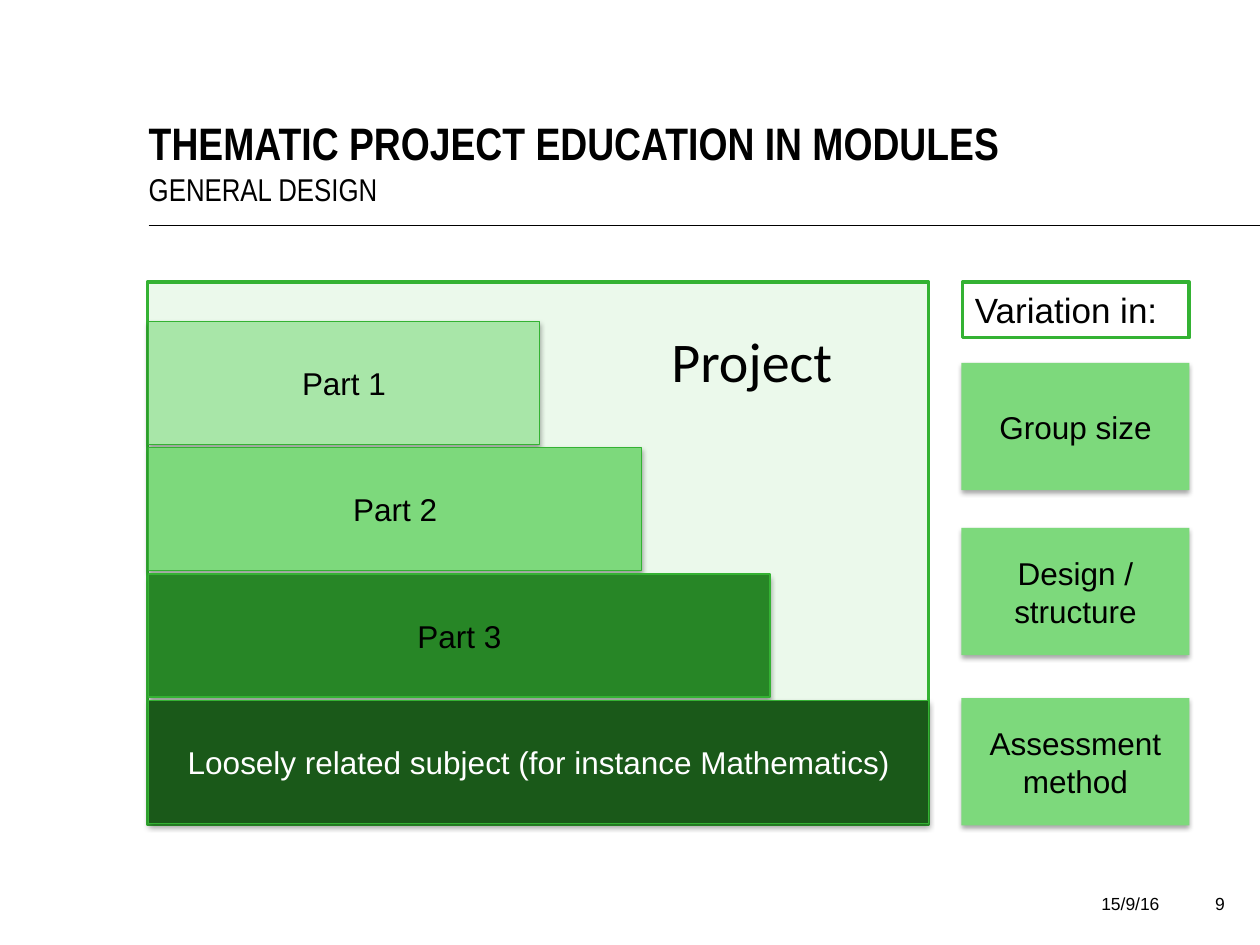
from lxml import etree
from pptx import Presentation
from pptx.dml.color import RGBColor
from pptx.enum.shapes import MSO_CONNECTOR, MSO_SHAPE
from pptx.enum.text import MSO_ANCHOR, MSO_AUTO_SIZE, PP_ALIGN
from pptx.oxml import parse_xml
from pptx.oxml.ns import qn
from pptx.util import Pt

RECT, STRAIGHT = MSO_SHAPE.RECTANGLE, MSO_CONNECTOR.STRAIGHT
TOP, MIDDLE, BOTTOM = MSO_ANCHOR.TOP, MSO_ANCHOR.MIDDLE, MSO_ANCHOR.BOTTOM
LEFT, CENTER, RIGHT = PP_ALIGN.LEFT, PP_ALIGN.CENTER, PP_ALIGN.RIGHT
GROW = MSO_AUTO_SIZE.SHAPE_TO_FIT_TEXT

# Content
TITLE = "THEMATIC PROJECT EDUCATION IN MODULES"
SUBTITLE = "GENERAL DESIGN"
DATE, PAGE = "15/9/16", "9"
PROJECT, VARIATION = "Project", "Variation in:"
PARTS = [  # label, width, fill, text colour
    ("Part 1", 223.2, "pale", "black"),
    ("Part 2", 281.5, "light", "black"),
    ("Part 3", 355, "mid", "black"),
    ("Loosely related subject (for instance Mathematics)", 445.7, "dark", "white"),
]
VARIATIONS = [("Group size", 207.4), ("Design / structure", 301.7),
              ("Assessment method", 398.9)]  # label, top

THEME = {
    "black": "000000", "white": "FFFFFF", "outline": "34B233",
    "tint": "EBF9EB", "pale": "A8E6A8", "light": "7DD97C",
    "mid": "278626", "dark": "1A5919",
    "heading": "Arial Narrow", "body": "Arial", "label": "Calibri",
    "title": 26, "subtitle": 18, "box": 18, "variation": 20,
    "project": 32, "footer": 10,
}

# Layout
MARGIN = 85
PANEL = (84.2, 161.3, 446.4, 309.6)
PART_TOP, PART_STEP, PART_HEIGHT = 183.6, 72.25, 70.3
CARD_LEFT, CARD_WIDTH, CARD_HEIGHT = 549.4, 130.3, 72.7
NO_INSETS = (0, 0, 0, 0)
DEFAULT_INSETS = (7.2, 3.6, 7.2, 3.6)

SHADOW = """<a:outerShdw
 xmlns:a="http://schemas.openxmlformats.org/drawingml/2006/main"
 blurRad="39370" dist="22860" dir="5400000" rotWithShape="0">
 <a:srgbClr val="000000"><a:alpha val="35000"/></a:srgbClr></a:outerShdw>"""


def colour(name):
    return RGBColor.from_string(THEME[name])


def write(shape, text, size="box", font="body", ink="black", align=LEFT,
          anchor=TOP, insets=DEFAULT_INSETS, leading=None, grow=False):
    frame = shape.text_frame
    frame.word_wrap = True
    frame.vertical_anchor = anchor
    (frame.margin_left, frame.margin_top,
     frame.margin_right, frame.margin_bottom) = map(Pt, insets)
    if grow:
        frame.auto_size = GROW
    paragraph = frame.paragraphs[0]
    paragraph.text = text
    paragraph.alignment = align
    if leading:
        paragraph.line_spacing = Pt(leading)
    paragraph.font.name = THEME[font]
    paragraph.font.size = Pt(THEME[size])
    paragraph.font.color.rgb = colour(ink)
    return paragraph


def add_text(slide, at, text, **style):
    return write(slide.shapes.add_textbox(*map(Pt, at)), text, **style)


def add_box(slide, at, fill, line_width=0, shadow=False):
    box = slide.shapes.add_shape(RECT, *map(Pt, at))
    box.fill.solid()
    box.fill.fore_color.rgb = colour(fill)
    if line_width:
        box.line.color.rgb = colour("outline")
        box.line.width = Pt(line_width)
    else:
        box.line.fill.background()
    box.shadow.inherit = False
    if shadow:
        box.element.spPr.find(qn("a:effectLst")).append(parse_xml(SHADOW))
    return box


def main():
    deck = Presentation()
    deck.slide_width, deck.slide_height = Pt(720), Pt(540)
    slide = deck.slides.add_slide(deck.slide_layouts[6])

    # Heading and rule
    rule = slide.shapes.add_connector(STRAIGHT, Pt(MARGIN), Pt(128.9), Pt(720), Pt(128.9))
    rule.line.color.rgb = colour("black")
    rule.line.width = Pt(1)
    etree.SubElement(rule.element.spPr, qn("a:effectLst"))
    heading = dict(font="heading", anchor=BOTTOM, insets=NO_INSETS, leading=25)
    title = add_text(slide, (MARGIN, 39.6, 612, 57.6), TITLE, size="title", **heading)
    title.font.bold = True
    add_text(slide, (MARGIN, 96.5, 612, 22.3), SUBTITLE, size="subtitle", **heading)

    # Project panel with its stepped parts
    add_box(slide, PANEL, "tint", 2)
    for i, (label, width, fill, ink) in enumerate(PARTS):
        at = (MARGIN, PART_TOP + i * PART_STEP, width, PART_HEIGHT)
        write(add_box(slide, at, fill, 0.75, shadow=True), label,
              ink=ink, align=CENTER, anchor=MIDDLE)
    add_text(slide, (376.6, 182.9, 127.4, 46.8), PROJECT,
             size="project", font="label", grow=True)

    # Variation column
    variation = add_box(slide, (550, PANEL[1], 129.6, 31.7), "white", 2)
    write(variation, VARIATION, size="variation", grow=True)
    for label, top in VARIATIONS:
        card = add_box(slide, (CARD_LEFT, top, CARD_WIDTH, CARD_HEIGHT), "light", shadow=True)
        write(card, label, align=CENTER, anchor=MIDDLE)

    # Footer
    footer = dict(size="footer", align=RIGHT, leading=15)
    add_text(slide, (596.2, 504, 73.4, 37.4), DATE, **footer)
    add_text(slide, (670.3, 504, 29.5, 37.4), PAGE, insets=(7.2, 3.6, 0, 3.6), **footer)

    deck.save("out.pptx")


if __name__ == "__main__":
    main()
